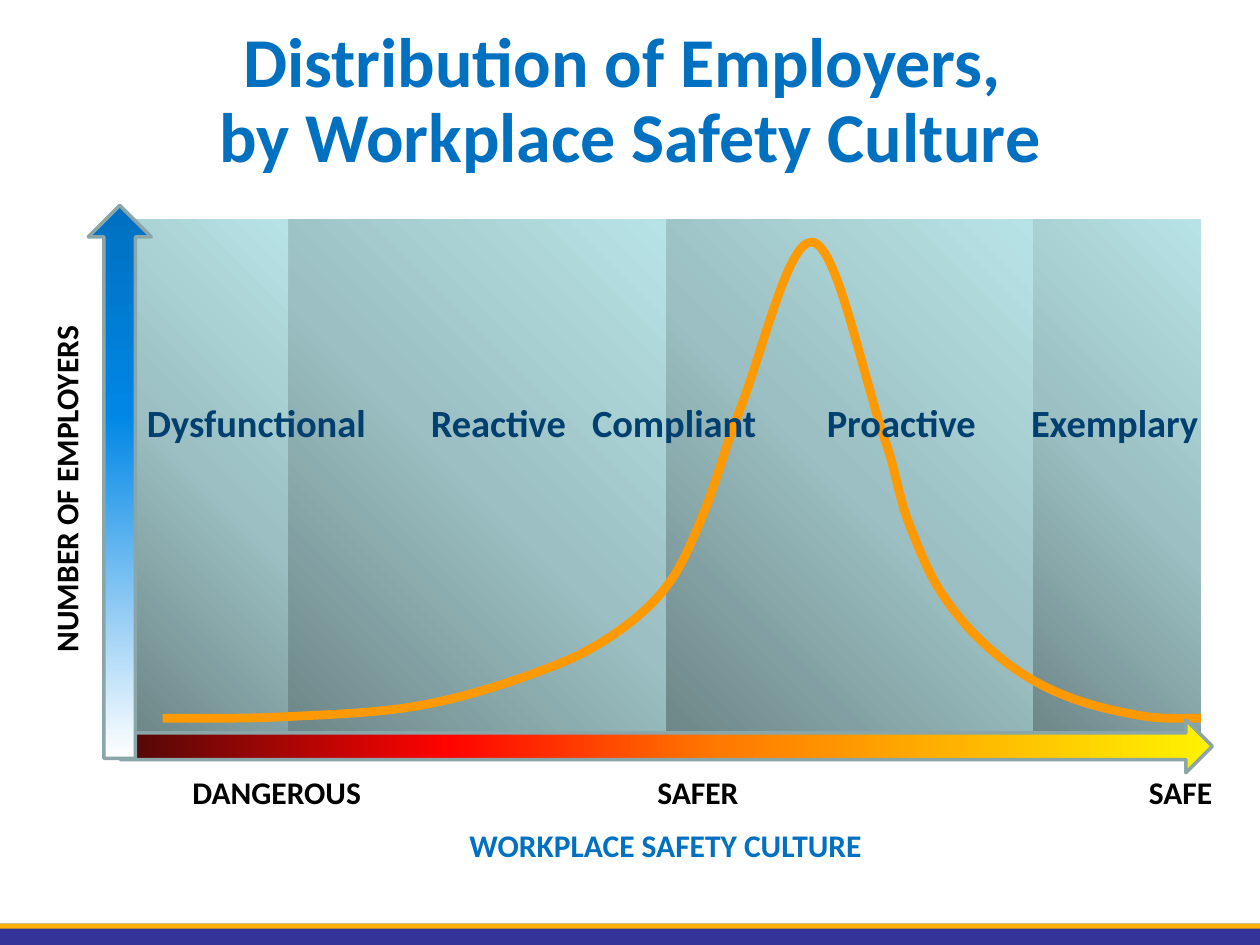
from itertools import pairwise

from lxml.etree import SubElement
from pptx import Presentation
from pptx.dml.color import RGBColor
from pptx.enum.shapes import MSO_SHAPE
from pptx.enum.text import MSO_ANCHOR, MSO_AUTO_SIZE, PP_ALIGN
from pptx.oxml.ns import qn
from pptx.util import Cm, Pt

COLORS = {
    "title": "0070C0", "zone_label": "004070", "axis_label": "000000",
    "footer": "333399", "stripe": "FFB300", "curve": "FF9900", "outline": "8AA6A8",
}
ZONE_STOPS = {0: "6D8688", 50: "9BBFC2", 100: "B8E3E6"}
SAFETY_STOPS = {0: "FFF200", 45: "FF7A00", 70: "FF0300", 100: "4D0808"}
EMPLOYER_STOPS = {0: "0070C0", 38: "0087E6", 100: "FFFFFF"}

ZONE_EDGES = [0, 3.08, 10.7, 18.09, 21.47]
ZONE_LABEL_CENTERS = {"Dysfunctional": 2.43, "Proactive": 15.43, "Exemplary": 19.73}
SAFETY_LABEL_CENTERS = {"DANGEROUS": 3.16, "SAFER": 11.65, "SAFE": 21.38}

EMPLOYERS_BY_SAFETY = {
    "slow rise": [(0.54, 0), (3, 0.03), (5.85, 0.28), (8.46, 1.07), (9.83, 1.83)],
    "steep rise": [(10.8, 2.8), (11.46, 4.17), (12.14, 6.12)],
    "peak": [(13.62, 9.6)],
    "steep fall": [(15.14, 5.49), (15.55, 4.02), (16.23, 2.54)],
    "slow fall": [(17.33, 1.3), (18.6, 0.51), (20.27, 0.05), (21.47, 0)],
}


def set_font(font, size, color):
    for attribute, value in {"name": "Calibri", "size": Pt(size), "bold": True}.items():
        setattr(font, attribute, value)
    font.color.rgb = RGBColor.from_string(COLORS[color])


def add_block(slide, preset, left, top, width, height):
    block = slide.shapes.add_shape(preset, Cm(left), Cm(top), Cm(width), Cm(height))
    block.shadow.inherit = False
    block.line.fill.background()
    return block


def set_line(outlined, color, width):
    outlined.line.color.rgb = RGBColor.from_string(COLORS[color])
    outlined.line.width = Pt(width)


def set_gradient(block, stops, from_corner=False):
    block.fill.gradient()
    gradient = block._element.spPr.find(qn("a:gradFill"))
    for child in list(gradient):
        gradient.remove(child)
    gradient.set("rotWithShape", "1")
    stop_list = SubElement(gradient, qn("a:gsLst"))
    for percent, color in stops.items():
        stop = SubElement(stop_list, qn("a:gs"), pos=str(percent * 1000))
        SubElement(stop, qn("a:srgbClr"), val=color)
    if from_corner:
        direction = SubElement(gradient, qn("a:path"), path="circle")
        SubElement(direction, qn("a:fillToRect"), t="100000", r="100000")
    else:
        SubElement(gradient, qn("a:lin"), ang="5400000", scaled="0")


def add_label(slide, text, center, top, width, height, size, color, rotation=0):
    label = slide.shapes.add_textbox(
        Cm(center - width / 2), Cm(top), Cm(width), Cm(height))
    label.rotation = rotation
    label.text_frame.word_wrap = True
    paragraph = label.text_frame.paragraphs[0]
    paragraph.text = text
    paragraph.alignment = PP_ALIGN.CENTER
    set_font(paragraph.runs[0].font, size, color)
    return label


def add_footer(slide, left, top, width, height):
    for color, band_height in {"footer": height, "stripe": 0.1}.items():
        band = add_block(slide, MSO_SHAPE.RECTANGLE, left, top, width, band_height)
        band.fill.solid()
        band.fill.fore_color.rgb = RGBColor.from_string(COLORS[color])


def place_title(slide, left, top, width, height):
    title = slide.shapes.title
    box = {"left": left, "top": top, "width": width, "height": height}
    for attribute, value in box.items():
        setattr(title, attribute, Cm(value))
    frame = title.text_frame
    frame.auto_size = MSO_AUTO_SIZE.NONE
    frame.vertical_anchor = MSO_ANCHOR.MIDDLE
    paragraph = frame.paragraphs[0]
    paragraph.text = "Distribution of Employers, \vby Workplace Safety Culture"
    paragraph.alignment = PP_ALIGN.CENTER
    paragraph.line_spacing = 0.9
    for run in paragraph.runs:
        set_font(run.font, 40, "title")


def add_zones(slide, left, top, height):
    for start, end in pairwise(ZONE_EDGES):
        zone = add_block(slide, MSO_SHAPE.RECTANGLE, left + start, top, end - start, height)
        set_gradient(zone, ZONE_STOPS, from_corner=True)


def slope_at(knots, index):
    if index in (0, len(knots) - 1):
        return 0
    (x_before, y_before), (_, y), (x_after, y_after) = knots[index - 1:index + 2]
    is_peak = y > max(y_before, y_after)
    return 0 if is_peak else (y_after - y_before) / (x_after - x_before)


def smooth_points(knots):
    slopes = [slope_at(knots, index) for index in range(len(knots))]
    points = [knots[0]]
    for ((x1, y1), slope1), ((x2, y2), slope2) in pairwise(zip(knots, slopes)):
        reach = (x2 - x1) / 3
        points += [(x1 + reach, y1 + reach * slope1),
                   (x2 - reach, y2 - reach * slope2), (x2, y2)]
    return points


def add_curve(slide, left, baseline):
    knots = [knot for part in EMPLOYERS_BY_SAFETY.values() for knot in part]
    start, *bends = [(round(x * 100), round(-y * 100)) for x, y in smooth_points(knots)]
    builder = slide.shapes.build_freeform(*start, scale=Cm(0.01))
    builder.add_line_segments(bends, close=False)
    curve = builder.convert_to_shape(Cm(left), Cm(baseline))
    curve.shadow.inherit = False
    curve.fill.background()
    set_line(curve, "curve", 5)
    outline = next(curve._element.iter(qn("a:path")))
    segments = outline.findall(qn("a:lnTo"))
    for first in range(0, len(segments), 3):
        bend = SubElement(outline, qn("a:cubicBezTo"))
        for segment in segments[first:first + 3]:
            bend.append(segment[0])
            outline.remove(segment)


def add_axis(slide, left, top, width, height, stops, rotation=0):
    axis = add_block(slide, MSO_SHAPE.UP_ARROW, left, top, width, height)
    axis.rotation = rotation
    set_gradient(axis, stops)
    set_line(axis, "outline", 2)


def add_safety_axis(slide, left, top, length, thickness):
    center_x, center_y = left + length / 2, top + thickness / 2
    add_axis(slide, center_x - thickness / 2, center_y - length / 2,
             thickness, length, SAFETY_STOPS, rotation=90)
    for text, center in SAFETY_LABEL_CENTERS.items():
        add_label(slide, text, left + center, top + 0.94, 5, 1.02, 18, "axis_label")
    add_label(slide, "WORKPLACE SAFETY CULTURE", left + 11, top + 2.02,
              9, 1.02, 18, "title")


def add_employer_axis(slide, left, top, width, height):
    add_axis(slide, left, top, width, height, EMPLOYER_STOPS)
    add_label(slide, "NUMBER OF EMPLOYERS", left - 0.45, top + 5.21,
              10.87, 1.02, 18, "axis_label", rotation=-90)


def add_zone_labels(slide, left, top):
    for text, center in ZONE_LABEL_CENTERS.items():
        add_label(slide, text, left + center, top, 5.92, 1.19, 22, "zone_label")
    middle = add_label(slide, "Reactive\tCompliant", left + 9.23, top, 8.89, 1.19,
                       22, "zone_label")
    middle.text_frame.margin_left = Cm(1.16)
    paragraph = middle.text_frame.paragraphs[0]
    paragraph.alignment = PP_ALIGN.LEFT
    tabs = SubElement(paragraph._p.get_or_add_pPr(), qn("a:tabLst"))
    SubElement(tabs, qn("a:tab"), pos=str(Cm(3.25)), algn="l")


def main():
    presentation = Presentation()
    presentation.slide_width = Cm(25.4)
    presentation.slide_height = Cm(19.05)
    slide = presentation.slides.add_slide(presentation.slide_layouts[5])
    plot_left, plot_top = 2.74, 4.42
    add_footer(slide, 0, 18.62, 25.4, 0.43)
    place_title(slide, 0, 0.37, 25.4, 3.38)
    add_zones(slide, plot_left, plot_top, 10.52)
    add_curve(slide, plot_left, plot_top + 10.06)
    add_safety_axis(slide, 2.42, 14.51, 22.02, 1.07)
    add_employer_axis(slide, 1.78, 4.14, 1.27, 11.15)
    add_zone_labels(slide, plot_left, plot_top + 3.5)
    presentation.save("out.pptx")


if __name__ == "__main__":
    main()
